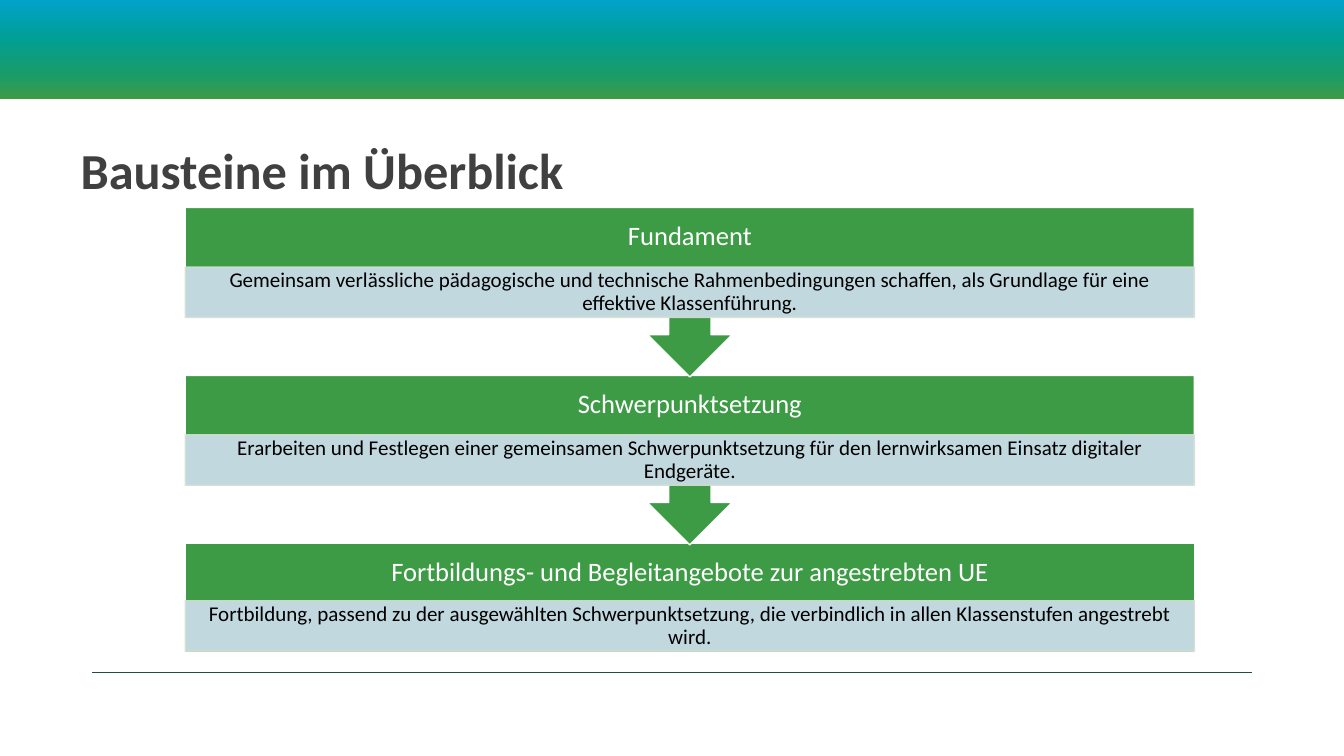
from lxml import etree
from pptx import Presentation
from pptx.dml.color import RGBColor
from pptx.enum.shapes import MSO_CONNECTOR, MSO_SHAPE as SHAPE
from pptx.enum.text import MSO_ANCHOR as ANCHOR, MSO_AUTO_SIZE, PP_ALIGN as ALIGN
from pptx.oxml import parse_xml
from pptx.oxml.ns import nsdecls, qn
from pptx.util import Cm, Pt

COLORS = {
    "green": "3E9B45", "strip": "D0DFF0", "strip_line": "D4E0CF",
    "white": "FFFFFF", "black": "000000", "title": "404040", "rule": "244C3B",
}
BANNER_STOPS = [(0, "01A2CA"), (26, "00A0A7"), (36, "009F97"), (75, "189C69"), (100, "3E9B45")]
STEPS = [
    ("Fundament",
     "Gemeinsam verlässliche pädagogische und technische Rahmenbedingungen schaffen, "
     "als Grundlage für eine effektive Klassenführung."),
    ("Schwerpunktsetzung",
     "Erarbeiten und Festlegen einer gemeinsamen Schwerpunktsetzung für den lernwirksamen "
     "Einsatz digitaler Endgeräte."),
    ("Fortbildungs- und Begleitangebote zur angestrebten UE",
     "Fortbildung, passend zu der ausgewählten Schwerpunktsetzung, die verbindlich in allen "
     "Klassenstufen angestrebt wird."),
]
LEFT, TOP, WIDTH, PITCH = 4.67, 5.23, 25.43, 4.23
HEADER_H, STRIP_H, CALLOUT_H, LAST_H = 1.5, 1.27, 4.27, 2.77


def rgb(name):
    return RGBColor.from_string(COLORS[name])


class SlideBuilder:
    font = "Calibri"

    def __init__(self, slide):
        self.slide = slide

    def set_text(self, sp, text, size, color, margins, anchor=ANCHOR.MIDDLE,
                 align=ALIGN.CENTER, bold=False):
        tf = sp.text_frame
        tf.word_wrap = True
        tf.auto_size = MSO_AUTO_SIZE.NONE
        tf.vertical_anchor = anchor
        tf.margin_left = tf.margin_right = Cm(margins[0])
        tf.margin_top = tf.margin_bottom = Cm(margins[1])
        tf.text = text
        p = tf.paragraphs[0]
        p.alignment = align
        p.line_spacing = 0.9
        p.space_before = Pt(0)
        f = p.runs[0].font
        f.name, f.size, f.bold = self.font, Pt(size), bold
        f.color.rgb = rgb(color)

    def title(self, text, *box):
        sp = self.slide.shapes.title
        sp.left, sp.top, sp.width, sp.height = map(Cm, box)
        self.set_text(sp, text, 36, "title", (0.25, 0.13), ANCHOR.BOTTOM, ALIGN.LEFT, True)

    def shape(self, kind, box, fill, line=None):
        sp = self.slide.shapes.add_shape(kind, *map(Cm, box))
        sp.shadow.inherit = False
        sp.fill.solid()
        sp.fill.fore_color.rgb = rgb(fill)
        if line:
            sp.line.color.rgb = rgb(line)
            sp.line.width = Pt(1)
        else:
            sp.line.fill.background()
        return sp

    def banner(self, box, stops):
        sp = self.shape(SHAPE.RECTANGLE, box, "green")
        stop_xml = "".join(f'<a:gs pos="{pos * 1000}"><a:srgbClr val="{color}"/></a:gs>'
                           for pos, color in stops)
        solid = sp.element.spPr.find(qn("a:solidFill"))
        sp.element.spPr.replace(solid, parse_xml(
            f'<a:gradFill {nsdecls("a")} rotWithShape="1"><a:gsLst>{stop_xml}</a:gsLst>'
            '<a:lin ang="5400000" scaled="0"/></a:gradFill>'))

    def rule(self, x1, x2, y):
        ln = self.slide.shapes.add_connector(MSO_CONNECTOR.STRAIGHT, Cm(x1), Cm(y), Cm(x2), Cm(y))
        ln.line.color.rgb = rgb("rule")
        ln.line.width = Pt(0.25)
        etree.SubElement(ln.element.spPr, qn("a:effectLst"))

    def header(self, text, *box):
        sp = self.slide.shapes.add_textbox(*map(Cm, box))
        self.set_text(sp, text, 19, "white", (0.38, 0.38))

    def strip(self, text, *box):
        sp = self.shape(SHAPE.RECTANGLE, box, "strip", "strip_line")
        # 90 % opacity for fill and outline
        for clr in sp.element.spPr.iter(qn("a:srgbClr")):
            etree.SubElement(clr, qn("a:alpha"), val="90000")
        self.set_text(sp, text, 15, "black", (0.3, 0.05))

    def step(self, top, heading, detail, is_last):
        kind = SHAPE.RECTANGLE if is_last else SHAPE.DOWN_ARROW_CALLOUT
        height = LAST_H if is_last else CALLOUT_H
        strip_top = top + HEADER_H - (0.05 if is_last else 0)
        self.shape(kind, (LEFT, top, WIDTH, height), "green", "white")
        self.header(heading, LEFT, top, WIDTH, HEADER_H)
        self.strip(detail, LEFT, strip_top, WIDTH, STRIP_H)


def main():
    prs = Presentation()
    prs.slide_width, prs.slide_height = Cm(33.87), Cm(19.05)
    s = SlideBuilder(prs.slides.add_slide(prs.slide_layouts[5]))

    # Frame: banner, bottom rule and title
    s.banner((0, 0, 33.87, 2.49), BANNER_STOPS)
    s.rule(2.33, 31.55, 16.94)
    s.title("Bausteine im Überblick", 1.78, 2.9, 29.92, 2.29)

    # Steps from the last up, so each arrow tip lies on the step below
    for i, (heading, detail) in reversed(list(enumerate(STEPS))):
        s.step(TOP + i * PITCH, heading, detail, i == len(STEPS) - 1)

    prs.save("out.pptx")


if __name__ == "__main__":
    main()
